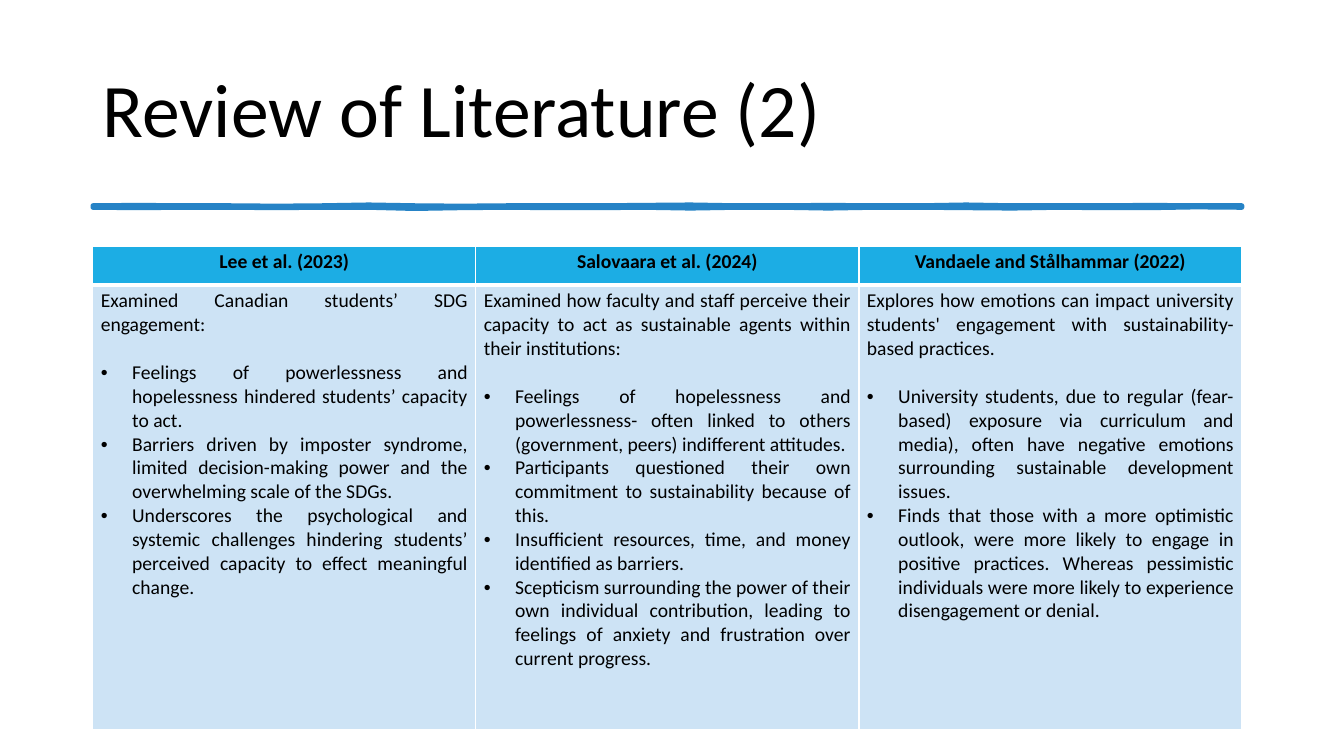
from dataclasses import dataclass
from lxml.etree import SubElement as Sub
from pptx import Presentation
from pptx.dml.color import RGBColor as Rgb
from pptx.enum.text import MSO_ANCHOR as Anchor, MSO_AUTO_SIZE as Auto, PP_ALIGN as Align
from pptx.oxml.ns import qn
from pptx.util import Cm, Pt


@dataclass(frozen=True)
class Theme:
    font: str = "Calibri"
    ink: str = "000000"
    rule: str = "2683C6"
    head: str = "1CADE4"
    body: str = "CDE3F5"
    grid: str = "FFFFFF"
    title: float = 54
    text: float = 14
    gap: float = 17


THEME = Theme()
TITLE = "Review of Literature (2)"
STUDIES = [
    ("Lee et al. (2023)",
     "Examined Canadian students’ SDG engagement:",
     ["Feelings of powerlessness and hopelessness hindered students’ capacity to act.",
      "Barriers driven by imposter syndrome, limited decision-making power and the "
      "overwhelming scale of the SDGs.",
      "Underscores the psychological and systemic challenges hindering students’ "
      "perceived capacity to effect meaningful change."]),
    ("Salovaara et al. (2024)",
     "Examined how faculty and staff perceive their capacity to act as sustainable "
     "agents within their institutions:",
     ["Feelings of hopelessness and powerlessness- often linked to others "
      "(government, peers) indifferent attitudes.",
      "Participants questioned their own commitment to sustainability because of this.",
      "Insufficient resources, time, and money identified as barriers.",
      "Scepticism surrounding the power of their own individual contribution, leading "
      "to feelings of anxiety and frustration over current progress."]),
    ("Vandaele and Stålhammar (2022)",
     "Explores how emotions can impact university students' engagement with "
     "sustainability-based practices.",
     ["University students, due to regular (fear-based) exposure via curriculum and "
      "media), often have negative emotions surrounding sustainable development issues.",
      "Finds that those with a more optimistic outlook, were more likely to engage in "
      "positive practices. Whereas pessimistic individuals were more likely to "
      "experience disengagement or denial."]),
]
UPPER = [0, -1, 0, 0, 1, 0, -2, 0, 1, 0, 0, 0, -1, -2, 0, 0, -1, 0, 0, -2, 0, 0, 0, -1, 0, 0]
LOWER = [5, 6, 5, 5, 6, 5, 5, 8, 6, 5, 6, 6, 5, 7, 5, 5, 7, 5, 5, 6, 7, 5, 6, 6, 4, 5]


def write(para, text, size, bold=False):
    run = para.add_run()
    run.text = text
    font = run.font
    font.name, font.size, font.bold = THEME.font, Pt(size), bold
    font.color.rgb = Rgb.from_string(THEME.ink)


def bullet(para):
    props = para._p.get_or_add_pPr()
    props.set("marL", str(Cm(0.79)))
    props.set("indent", str(-Cm(0.79)))
    Sub(props, qn("a:buFont")).set("typeface", "Arial")
    Sub(props, qn("a:buChar")).set("char", "•")


def paint(cell, color, top, base):
    props = cell._tc.get_or_add_tcPr()
    for side, width in zip("LRTB", (1, 1, top, base)):
        line = Sub(props, qn(f"a:ln{side}"), w=str(Pt(width)))
        Sub(Sub(line, qn("a:solidFill")), qn("a:srgbClr")).set("val", THEME.grid)
    cell.fill.solid()
    cell.fill.fore_color.rgb = Rgb.from_string(color)
    cell.margin_left = cell.margin_right = Cm(0.2)
    cell.margin_top = cell.margin_bottom = Cm(0.1)


def heading(slide, left, top, width, height):
    shape = slide.shapes.title
    shape.left, shape.top, shape.width, shape.height = left, top, width, height
    frame = shape.text_frame
    frame.auto_size = Auto.NONE
    frame.vertical_anchor = Anchor.MIDDLE
    para = frame.paragraphs[0]
    para.alignment = Align.LEFT
    para.line_spacing = 0.9
    write(para, TITLE, THEME.title)


def stroke(slide, left, top, width):
    step = width / (len(UPPER) - 1)

    def edge(drops):
        return [(int(left + i * step), int(top + Cm(drop / 100)))
                for i, drop in enumerate(drops)]

    points = edge(UPPER) + edge(LOWER)[::-1]
    pen = slide.shapes.build_freeform(*points[0], scale=1.0)
    pen.add_line_segments(points[1:], close=True)
    shape = pen.convert_to_shape()
    shape.shadow.inherit = False
    shape.fill.solid()
    shape.fill.fore_color.rgb = Rgb.from_string(THEME.rule)
    shape.line.color.rgb = Rgb.from_string(THEME.rule)
    shape.line.width = Pt(3.25)
    Sub(shape.line._get_or_add_ln(), qn("a:round"))


def review(slide, left, top, width, height):
    table = slide.shapes.add_table(2, len(STUDIES), left, top, width, height).table
    table.horz_banding = False
    table.rows[0].height = Cm(0.99)
    table.rows[1].height = height - Cm(0.99)
    for col, (name, intro, points) in enumerate(STUDIES):
        table.columns[col].width = width // len(STUDIES)
        head, body = table.cell(0, col), table.cell(1, col)
        paint(head, THEME.head, 1, 3)
        paint(body, THEME.body, 3, 1)
        para = head.text_frame.paragraphs[0]
        para.alignment = Align.CENTER
        write(para, name, THEME.text, True)
        para = body.text_frame.paragraphs[0]
        para.alignment = Align.JUSTIFY
        write(para, intro, THEME.text)
        for i, point in enumerate(points):
            para = body.text_frame.add_paragraph()
            bullet(para)
            para.alignment = Align.JUSTIFY
            if i == 0:
                para.space_before = Pt(THEME.gap)
            write(para, point, THEME.text)


def main():
    deck = Presentation()
    deck.slide_width, deck.slide_height = Cm(33.87), Cm(19.05)
    slide = deck.slides.add_slide(deck.slide_layouts[5])
    left, width = Cm(2.34), Cm(28.96)
    heading(slide, left, Cm(1.02), Cm(29.21), Cm(3.68))
    stroke(slide, left, Cm(5.18), width)
    review(slide, left, Cm(6.2), width, Cm(12.18))
    deck.save("out.pptx")


if __name__ == "__main__":
    main()
